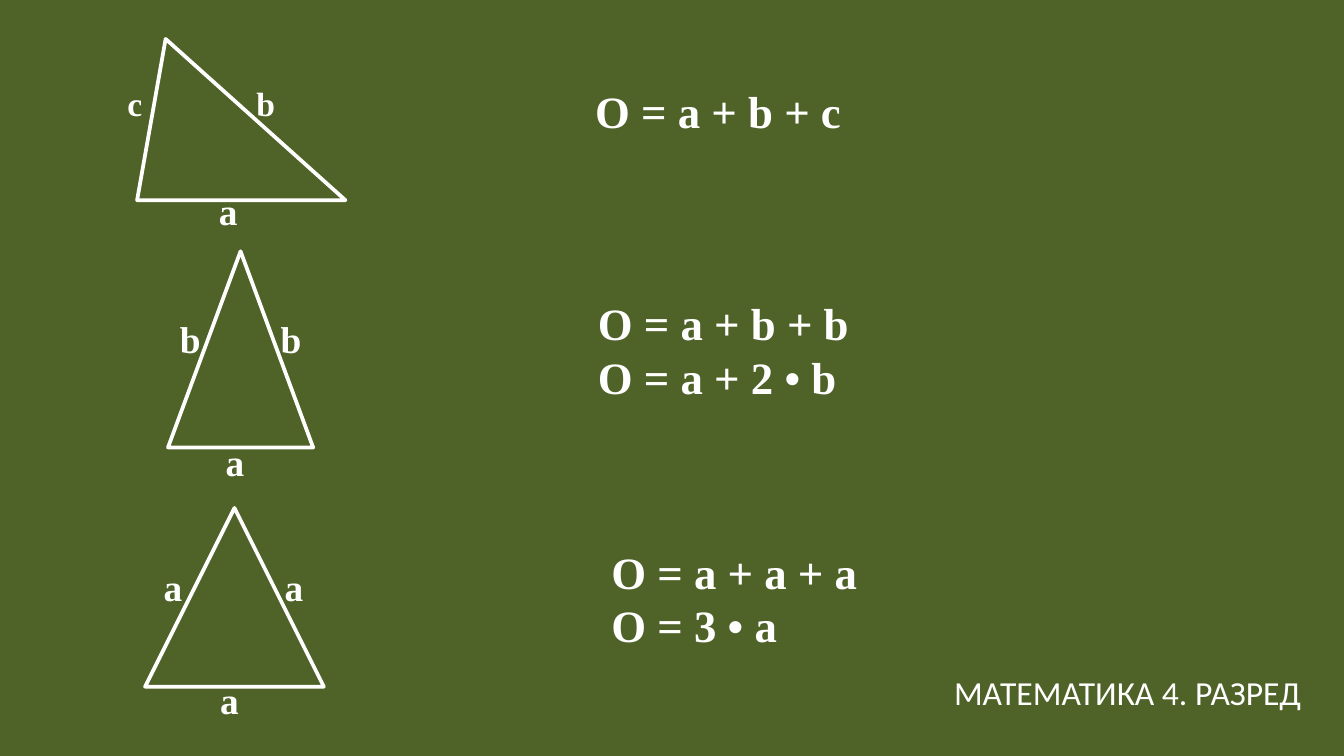
from typing import NamedTuple

import pptx
import pptx.dml.color
import pptx.enum.shapes
import pptx.enum.text
import pptx.util

Inches = pptx.util.Inches
Kind = pptx.enum.shapes.MSO_SHAPE
GREEN = pptx.dml.color.RGBColor(0x4F, 0x62, 0x28)
WHITE = pptx.dml.color.RGBColor(0xFF, 0xFF, 0xFF)


class Box(NamedTuple):
    left: float
    top: float
    width: float
    height: float


class Label(NamedTuple):
    text: str
    left: float
    top: float


class Figure(NamedTuple):
    kind: Kind
    box: Box
    sides: list[Label]
    rules: list[str]
    place: Box
    size: int = 20
    peak: float | None = None


FIGURES = [
    Figure(Kind.ISOSCELES_TRIANGLE, Box(1.02, 0.29, 1.55, 1.2),
           [Label("b", 1.81, 0.57), Label("c", 0.85, 0.57), Label("a", 1.53, 1.35)],
           ["О = a + b + c"], Box(4.33, 0.57, 2.17, 0.91), size=18, peak=0.137),
    Figure(Kind.FLOWCHART_EXTRACT, Box(1.25, 1.87, 1.08, 1.46),
           [Label("a", 1.58, 3.22), Label("b", 1.99, 2.3), Label("b", 1.24, 2.3)],
           ["О = a + b + b", "О = a + 2 • b"], Box(4.35, 2.15, 2.92, 0.91)),
    Figure(Kind.FLOWCHART_EXTRACT, Box(1.08, 3.78, 1.33, 1.33),
           [Label("a", 1.54, 4.99), Label("a", 2.02, 4.15), Label("a", 1.12, 4.15)],
           ["О = a + a + a", "О = 3 • a"], Box(4.45, 4, 2.82, 0.91)),
]


def write(slide, lines: list[str], box: Box, *, size: int,
          font: str = "Times New Roman", bold: bool = True) -> None:
    frame = slide.shapes.add_textbox(*map(Inches, box)).text_frame
    frame.word_wrap = True
    frame.auto_size = pptx.enum.text.MSO_AUTO_SIZE.SHAPE_TO_FIT_TEXT
    frame.text = "\n".join(lines)
    for para in frame.paragraphs:
        style = para.runs[0].font
        style.name = font
        style.size = pptx.util.Pt(size)
        style.bold = bold
        style.color.rgb = WHITE


def draw(slide, figure: Figure) -> None:
    shape = slide.shapes.add_shape(figure.kind, *map(Inches, figure.box))
    shape.shadow.inherit = False
    shape.fill.background()
    shape.line.color.rgb = WHITE
    shape.line.width = pptx.util.Pt(2)
    if figure.peak is not None:
        shape.adjustments[0] = figure.peak
    for side in figure.sides:
        base = side.text == "a"
        box = Box(side.left, side.top, 0.46, 0.44)
        if figure.size == 18 and not base:
            box = box._replace(width=0.33, height=0.4)
        write(slide, [side.text], box, size=20 if base else figure.size)
    write(slide, figure.rules, figure.place, size=24)


def main() -> None:
    deck = pptx.Presentation()
    deck.slide_width = Inches(10)
    deck.slide_height = deck.slide_width * 9 // 16
    slide = deck.slides.add_slide(deck.slide_layouts[6])
    slide.background.fill.solid()
    slide.background.fill.fore_color.rgb = GREEN
    for figure in FIGURES:
        draw(slide, figure)
    write(slide, ["МАТЕМАТИКА 4. РАЗРЕД"], Box(7, 4.95, 4.42, 0.42),
          size=18, font="Calibri", bold=False)
    deck.save("out.pptx")


if __name__ == "__main__":
    main()
